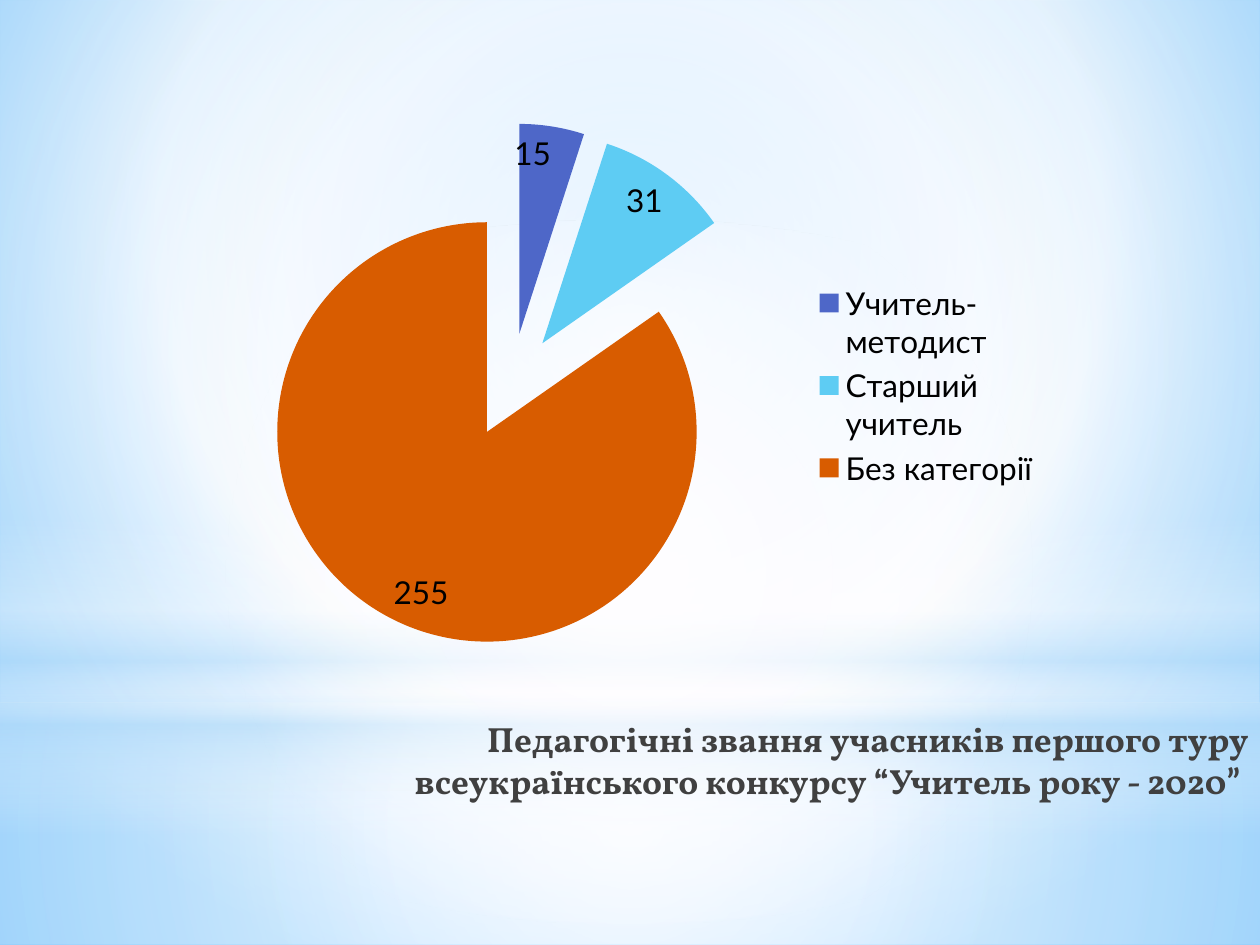
from lxml import etree
from pptx import Presentation
from pptx.chart.data import CategoryChartData
from pptx.dml.color import RGBColor
from pptx.enum.chart import XL_CHART_TYPE, XL_LABEL_POSITION, XL_LEGEND_POSITION
from pptx.enum.shapes import MSO_SHAPE
from pptx.enum.text import MSO_ANCHOR, PP_ALIGN
from pptx.oxml.ns import qn
from pptx.util import Pt

PIE = XL_CHART_TYPE.PIE
INSIDE = XL_LABEL_POSITION.INSIDE_END
RIGHT = XL_LEGEND_POSITION.RIGHT
RECT, OVAL = MSO_SHAPE.RECTANGLE, MSO_SHAPE.OVAL

SCALE = 914400 / 126
WIDE, HIGH = 1260, 945
COLORS = {
    "sky": "9ED5FF", "white": "FFFFFF", "blue": "5BB9FF",
    "glow": "FFFEFF", "mist": "B4DCFA",
    "indigo": "4E67C8", "cyan": "5ECCF3", "orange": "D85C00",
    "black": "000000", "gray": "404040",
}
MIDDLE = (50, 50, 50, 50)
SHARES = [
    ("Учитель-методист", 15, "indigo"),
    ("Старший учитель", 31, "cyan"),
    ("Без категорії", 255, "orange"),
]


def emu(*sizes):
    return [round(size * SCALE) for size in sizes]


def rgb(name):
    return RGBColor.from_string(COLORS[name])


def shade(parent, stops, focus=None):
    """Swap the fill in parent for a gradient: radial at focus, else downward."""
    grad = etree.Element(qn("a:gradFill"), rotWithShape="1")
    items = etree.SubElement(grad, qn("a:gsLst"))
    for pos, name, alpha in stops:
        stop = etree.SubElement(items, qn("a:gs"), pos=str(pos * 1000))
        color = etree.SubElement(stop, qn("a:srgbClr"), val=COLORS[name])
        if alpha < 100:
            etree.SubElement(color, qn("a:alpha"), val=str(alpha * 1000))
    if focus:
        track = etree.SubElement(grad, qn("a:path"), path="circle")
        sides = {side: str(part * 1000) for side, part in zip("ltrb", focus)}
        etree.SubElement(track, qn("a:fillToRect"), **sides)
    else:
        etree.SubElement(grad, qn("a:lin"), ang="5400000", scaled="0")
    old = parent.find(qn("a:solidFill"))
    parent.replace(old, grad)


def add_glow(slide, kind, box, stops, focus=None):
    shape = slide.shapes.add_shape(kind, *emu(*box))
    shape.shadow.inherit = False
    shape.line.fill.background()
    shape.fill.solid()
    shade(shape.element.spPr, stops, focus)


def add_backdrop(slide, box):
    left, top, wide, high = box
    slide.background.fill.solid()
    shade(slide.element.find(".//" + qn("p:bgPr")),
          [(0, "sky", 100), (60, "white", 100), (100, "blue", 100)],
          (20, 10, 20, 60))
    split = 703
    add_glow(slide, RECT, (left, top + split, wide, high - split),
             [(0, "glow", 91), (37, "glow", 76), (100, "mist", 79)], MIDDLE)
    add_glow(slide, RECT, (left, top, wide, split),
             [(0, "glow", 89), (48, "glow", 62), (100, "mist", 79)], MIDDLE)
    add_glow(slide, RECT, (left, top + 519, wide, 315),
             [(0, "glow", 0), (29, "glow", 30), (45, "mist", 40),
              (55, "glow", 26), (65, "mist", 60), (100, "glow", 0)])
    add_glow(slide, OVAL, (left, top + 220, wide, split),
             [(0, "glow", 100), (56, "glow", 0)], MIDDLE)


def add_title(slide, box):
    frame = slide.shapes.add_textbox(*emu(*box)).text_frame
    frame.word_wrap = True
    frame.vertical_anchor = MSO_ANCHOR.TOP
    para = frame.paragraphs[0]
    para.text = ("Педагогічні звання учасників першого туру "
                 "всеукраїнського конкурсу “Учитель року - 2020")
    para.alignment = PP_ALIGN.RIGHT
    para.add_run().text = "” "
    for run, face in zip(para.runs, ("Vollkorn", "Lato")):
        run.font.name = face
        run.font.size = Pt(20)
        run.font.bold = True
        run.font.color.rgb = rgb("gray")


def add_pie(slide, box):
    data = CategoryChartData()
    data.categories = [name for name, _, _ in SHARES]
    data.add_series("Series 1", [count for _, count, _ in SHARES])
    chart = slide.shapes.add_chart(PIE, *emu(*box), data).chart
    chart.has_title = False
    chart.font.name = "Lato"
    chart.font.size = Pt(18)
    chart.font.color.rgb = rgb("black")
    chart.has_legend = True
    chart.legend.position = RIGHT
    chart.legend.include_in_layout = False

    plot = chart.plots[0]
    plot.vary_by_categories = True
    plot.has_data_labels = True
    plot.data_labels.show_value = True
    plot.data_labels.show_percentage = False
    plot.data_labels.position = INSIDE

    series = plot.series[0]
    for i, (_, _, color) in enumerate(SHARES):
        fill = series.points[i].format.fill
        fill.solid()
        fill.fore_color.rgb = rgb(color)
    burst = etree.Element(qn("c:explosion"), val="25")
    series.format.element.find(qn("c:dPt")).addprevious(burst) if hasattr(
        series.format, "element") else chart.element.find(
        ".//" + qn("c:dPt")).addprevious(burst) if hasattr(
        chart, "element") else None


def main():
    deck = Presentation()
    deck.slide_width, deck.slide_height = emu(WIDE, HIGH)
    slide = deck.slides.add_slide(deck.slide_layouts[6])
    add_backdrop(slide, (0, 0, WIDE, HIGH))
    add_title(slide, (364, 711, 897, 157))
    add_pie(slide, (213, 106, 840, 559))
    deck.save("out.pptx")


if __name__ == "__main__":
    main()
